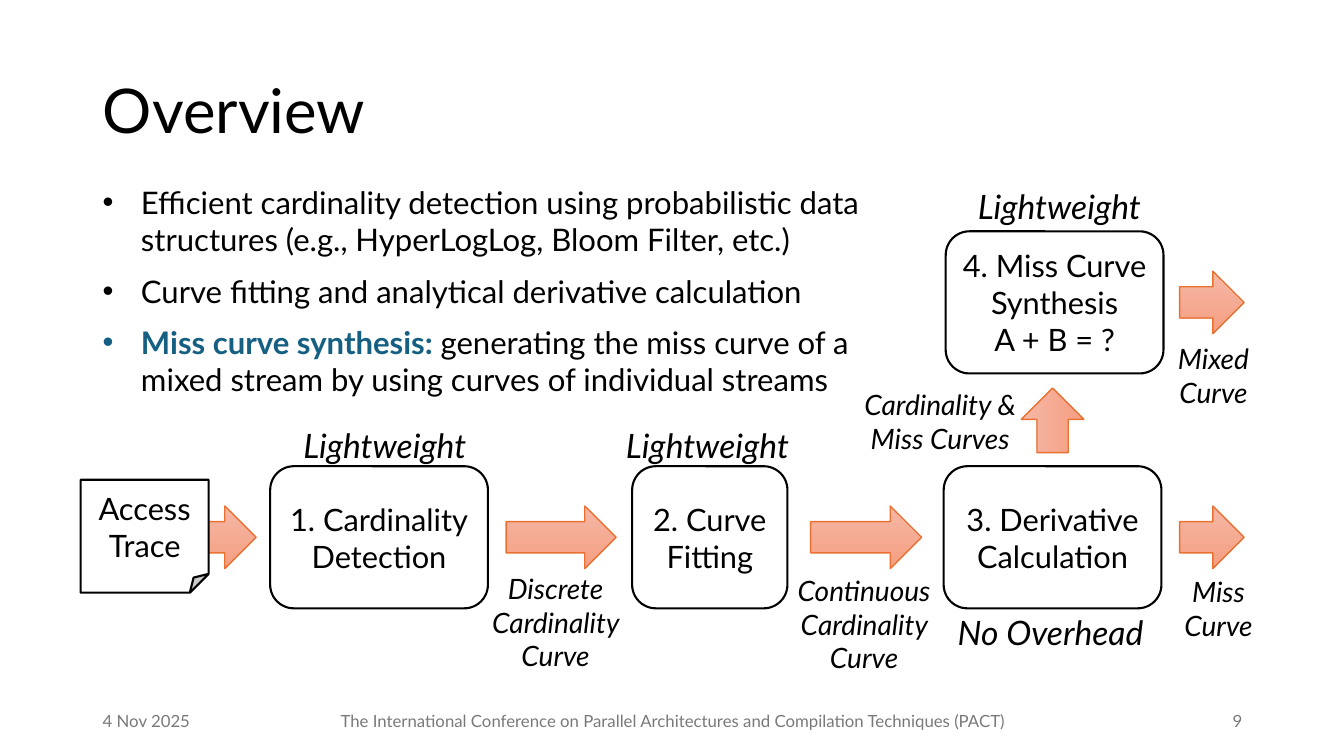
from lxml import etree
from pptx import Presentation
from pptx.dml.color import RGBColor
from pptx.enum.shapes import MSO_SHAPE
from pptx.enum.text import MSO_ANCHOR, PP_ALIGN
from pptx.oxml.ns import qn
from pptx.util import Inches, Pt

LEFT, CENTER, RIGHT = PP_ALIGN.LEFT, PP_ALIGN.CENTER, PP_ALIGN.RIGHT
TOP, MIDDLE = MSO_ANCHOR.TOP, MSO_ANCHOR.MIDDLE
ROUND_BOX, NOTE = MSO_SHAPE.ROUNDED_RECTANGLE, MSO_SHAPE.FOLDED_CORNER
ARROW = MSO_SHAPE.RIGHT_ARROW

BLACK = RGBColor(0x00, 0x00, 0x00)
WHITE = RGBColor(0xFF, 0xFF, 0xFF)
GRAY = RGBColor(0x79, 0x79, 0x79)
TEAL = RGBColor(0x15, 0x60, 0x82)
ORANGE = RGBColor(0xE9, 0x71, 0x32)
PEACH = RGBColor(0xF5, 0xB8, 0xA5)
SALMON = RGBColor(0xF5, 0x9E, 0x82)
FONT = "Lato"

TITLE = "Overview"
BULLETS = [
    ("", "Efficient cardinality detection using probabilistic data structures "
         "(e.g., HyperLogLog, Bloom Filter, etc.)"),
    ("", "Curve fitting and analytical derivative calculation"),
    ("Miss curve synthesis: ",
     "generating the miss curve of a mixed stream by using curves of individual streams"),
]

FLOW_MID, SYNTH_MID = 5.33, 3.0
STAGE_H, ARROW_W, ARROW_H = 1.41, 0.64, 0.62
STAGES = [
    ("1. Cardinality\nDetection", 2.68, 2.16, FLOW_MID),
    ("2. Curve Fitting", 6.27, 1.54, FLOW_MID),
    ("3. Derivative\nCalculation", 9.36, 2.16, FLOW_MID),
    ("4. Miss Curve Synthesis\nA + B = ?", 9.38, 2.16, SYNTH_MID),
]
ARROWS = [
    (1.9, ARROW_W, FLOW_MID, 0),
    (5.02, 1.09, FLOW_MID, 0),
    (8.04, 1.1, FLOW_MID, 0),
    (10.12, ARROW_W, 4.17, 270),
    (11.7, ARROW_W, FLOW_MID, 0),
    (11.7, ARROW_W, SYNTH_MID, 0),
]
COSTS = [
    ("Lightweight", 2.91, 4.17, 1.86),
    ("Lightweight", 6.11, 4.17, 1.86),
    ("Lightweight", 9.6, 1.8, 1.86),
    ("No Overhead", 9.4, 6.02, 2.12),
]
CURVES = [
    ("Discrete Cardinality Curve", 4.74, 5.62, 1.54, 1.11),
    ("Continuous Cardinality Curve", 7.76, 5.64, 1.62, 1.11),
    ("Miss Curve", 11.46, 5.65, 1.25, 0.77),
    ("Mixed\nCurve", 11.41, 3.34, 1.25, 0.77),
    ("Cardinality & Miss Curves", 8.44, 3.8, 1.77, 0.77),
]
FOOTER = [
    ("4 Nov 2025", 0.92, 1.96, LEFT),
    ("The International Conference on Parallel Architectures and Compilation "
     "Techniques (PACT)", 3.18, 6.99, CENTER),
    ("9", 10.46, 1.96, RIGHT),
]

prs = Presentation()
prs.slide_width, prs.slide_height = Inches(13.33), Inches(7.5)
s = prs.slides.add_slide(prs.slide_layouts[5])


def style(r, size, color=BLACK, bold=False, italic=False):
    r.font.name, r.font.size = FONT, Pt(size)
    r.font.color.rgb = color
    r.font.bold, r.font.italic = bold, italic


def write(sp, text, size, align=CENTER, anchor=MIDDLE, color=BLACK, italic=False, wrap=True):
    tf = sp.text_frame
    tf.text = text
    tf.word_wrap, tf.vertical_anchor = wrap, anchor
    for p in tf.paragraphs:
        p.alignment = align
        for r in p.runs:
            style(r, size, color, italic=italic)


def add_box(x, y, w, h):
    return s.shapes.add_textbox(Inches(x), Inches(y), Inches(w), Inches(h))


def add_shape(kind, x, mid, w, h, line, weight):
    sp = s.shapes.add_shape(kind, Inches(x), Inches(mid - h / 2), Inches(w), Inches(h))
    sp.shadow.inherit = False
    sp.fill.solid()
    sp.fill.fore_color.rgb = WHITE
    sp.line.color.rgb, sp.line.width = line, Pt(weight)
    return sp


def add_bullets():
    tf = add_box(0.73, 1.77, 8.22, 2.37).text_frame
    tf.word_wrap = True
    for i, (lead, rest) in enumerate(BULLETS):
        p = tf.paragraphs[0] if i == 0 else tf.add_paragraph()
        pPr = p._p.get_or_add_pPr()
        pPr.set("marL", str(Inches(0.57)))
        pPr.set("indent", str(Inches(-0.38)))
        etree.SubElement(pPr, qn("a:buFont")).set("typeface", "Arial")
        etree.SubElement(pPr, qn("a:buChar")).set("char", "•")
        if i:
            p.space_before = Pt(10)
        for text, color, bold in ((lead, TEAL, True), (rest, BLACK, False)):
            if text:
                r = p.add_run()
                r.text = text
                style(r, 22.2, color, bold)


title = s.shapes.title
title.left, title.top = Inches(0.92), Inches(0.4)
title.width, title.height = Inches(11.5), Inches(1.45)
write(title, TITLE, 44, LEFT)
title.text_frame.paragraphs[0].line_spacing = 0.9
add_bullets()

for text, x, w, mid in STAGES:
    sp = add_shape(ROUND_BOX, x, mid, w, STAGE_H, BLACK, 1.5)
    write(sp, text, 22)
    sp.text_frame.margin_left = sp.text_frame.margin_right = Inches(0.05)

for x, w, mid, turn in ARROWS:
    sp = add_shape(ARROW, x, mid, w, ARROW_H, ORANGE, 1)
    sp.rotation = turn
    sp.fill.gradient()
    sp.fill.gradient_angle = 270
    for stop, color in zip(sp.fill.gradient_stops, (PEACH, SALMON)):
        stop.color.rgb = color

write(add_shape(NOTE, 0.8, 5.32, 1.27, 1.12, BLACK, 1.5), "Access\nTrace", 22)

for text, x, y, w in COSTS:
    write(add_box(x, y, w, 0.5), text, 24, LEFT, TOP, italic=True, wrap=False)

for text, x, y, w, h in CURVES:
    write(add_box(x, y, w, h), text, 20, anchor=TOP, italic=True)

for text, x, w, align in FOOTER:
    write(add_box(x, 6.95, w, 0.4), text, 12, align, color=GRAY)

prs.save("out.pptx")
